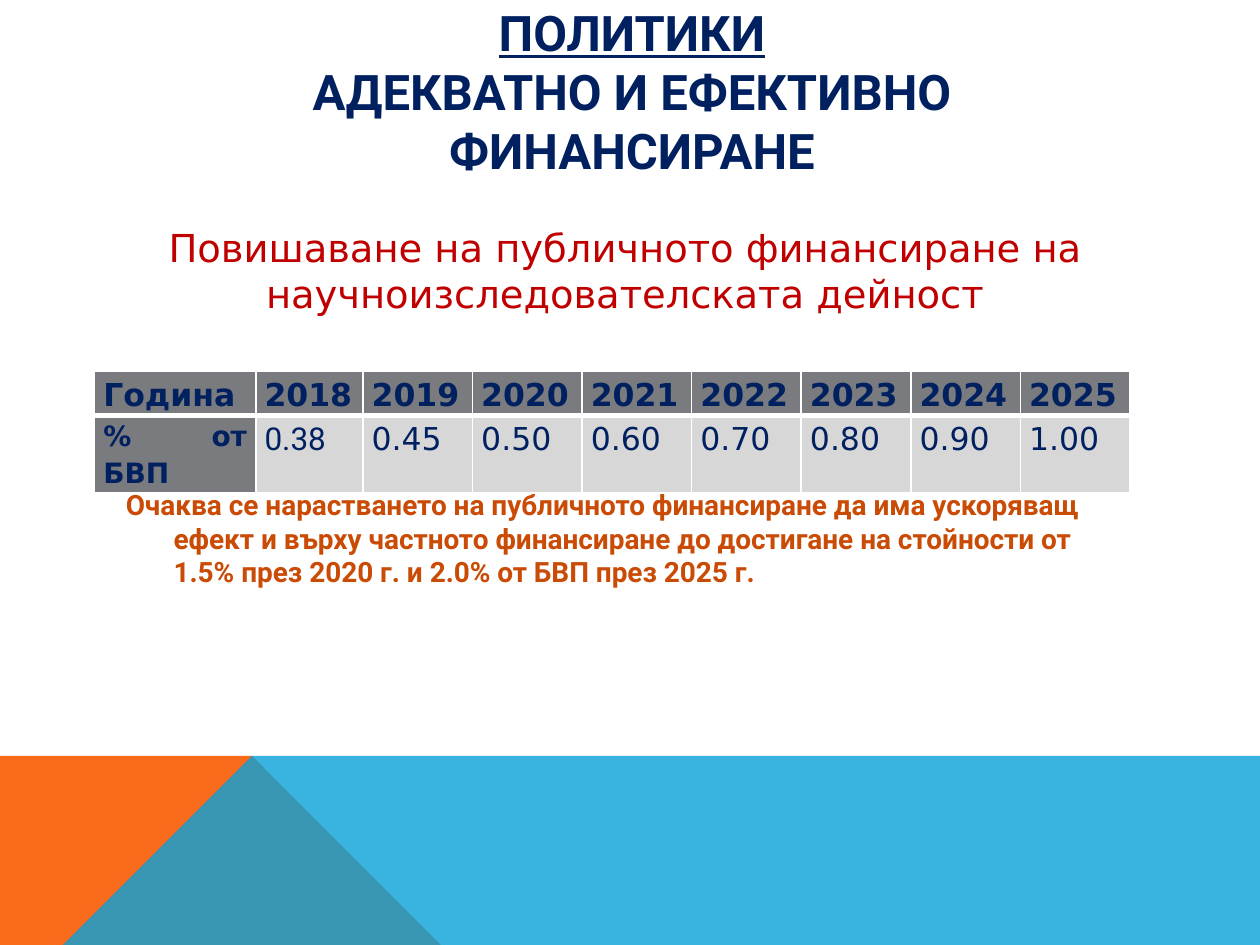
from lxml.etree import SubElement
from pptx import Presentation
from pptx.dml.color import RGBColor
from pptx.enum.text import MSO_ANCHOR, PP_ALIGN
from pptx.oxml.ns import qn
from pptx.util import Inches, Pt

W, H = 10, 7.5
NAVY, RED, RUST, WHITE = "002060", "C00000", "CA4B05", "FFFFFF"
HEAD_FILL, BODY_FILL = "797B7E", "D7D7D8"
SANS, TITLE_FONT = "DejaVu Sans", "Roboto"

TITLE = [("ПОЛИТИКИ", True), ("АДЕКВАТНО И ЕФЕКТИВНО ФИНАНСИРАНЕ", False)]
SUBTITLE = "Повишаване на публичното финансиране на научноизследователската дейност"
NOTE = ("Очаква се нарастването на публичното финансиране да има ускоряващ "
        "ефект и върху частното финансиране до достигане на стойности от "
        "1.5% през 2020 г. и 2.0% от БВП през 2025 г.")
ROWS = [
    ["Година", "2018", "2019", "2020", "2021", "2022", "2023", "2024", "2025"],
    ["% от БВП", "0.38", "0.45", "0.50", "0.60", "0.70", "0.80", "0.90", "1.00"],
]
COLS = [1.28, 0.85] + [0.87] * 7
ROW_H = 0.35

BAND_TOP, PEAK = 5.52, 2.23
BANDS = [
    ([(0, H), (0, BAND_TOP), (PEAK, BAND_TOP), (3.91, H)], "F96A1B", 100),
    ([(0, H), (PEAK, BAND_TOP), (W, BAND_TOP), (W, H)], "08A1D9", 80),
]


def rgb(color):
    return RGBColor.from_string(color)


def add_run(p, text, size, color, font, bold=False, underline=False):
    r = p.add_run()
    r.text = text
    f = r.font
    f.size, f.name, f.bold, f.underline = Pt(size), font, bold, underline
    f.color.rgb = rgb(color)


def add_box(slide, x, y, w, h, anchor=MSO_ANCHOR.TOP):
    tf = slide.shapes.add_textbox(*map(Inches, (x, y, w, h))).text_frame
    tf.word_wrap = True
    tf.vertical_anchor = anchor
    return tf


def add_band(slide, points, color, alpha):
    fb = slide.shapes.build_freeform(*points[0], scale=Inches(1))
    fb.add_line_segments(points[1:], close=True)
    sp = fb.convert_to_shape()
    sp.shadow.inherit = False
    sp.fill.solid()
    sp.fill.fore_color.rgb = rgb(color)
    sp.line.fill.background()
    if alpha < 100:
        clr = sp.fill._xPr.find(".//" + qn("a:srgbClr"))
        SubElement(clr, qn("a:alpha"), val=str(alpha * 1000))


def set_borders(cell, bottom):
    tcPr = cell._tc.get_or_add_tcPr()
    for i, (side, width) in enumerate([("L", 1), ("R", 1), ("T", 1), ("B", bottom)]):
        ln = tcPr.makeelement(qn("a:ln" + side), {"w": str(Pt(width))})
        fill = SubElement(ln, qn("a:solidFill"))
        SubElement(fill, qn("a:srgbClr"), val=WHITE)
        tcPr.insert(i, ln)


def fill_cell(cell, text, row, col):
    head = row == 0 or col == 0
    cell.fill.solid()
    cell.fill.fore_color.rgb = rgb(HEAD_FILL if head else BODY_FILL)
    cell.margin_left = cell.margin_right = Inches(0.07)
    cell.margin_top = cell.margin_bottom = 0
    p = cell.text_frame.paragraphs[0]
    p.alignment, p.line_spacing, p.space_after = PP_ALIGN.JUSTIFY, 1.15, Pt(6)
    size = 16 if (row, col) == (1, 0) else 18
    font = TITLE_FONT if (row, col) == (1, 1) else SANS
    add_run(p, text, size, NAVY, font, bold=head)
    set_borders(cell, 3 if row == 0 else 1)


def add_budget_table(slide, x, y):
    size = sum(COLS), ROW_H * len(ROWS)
    table = slide.shapes.add_table(
        len(ROWS), len(COLS), *map(Inches, (x, y, *size))).table
    for column, width in zip(table.columns, COLS):
        column.width = Inches(width)
    for i, row in enumerate(ROWS):
        table.rows[i].height = Inches(ROW_H)
        for j, text in enumerate(row):
            fill_cell(table.cell(i, j), text, i, j)


def main():
    prs = Presentation()
    prs.slide_width, prs.slide_height = Inches(W), Inches(H)
    slide = prs.slides.add_slide(prs.slide_layouts[6])

    for band in BANDS:
        add_band(slide, *band)

    tf = add_box(slide, 0.9, 0.42, 8.23, 0.6, MSO_ANCHOR.MIDDLE)
    for i, (text, underline) in enumerate(TITLE):
        p = tf.add_paragraph() if i else tf.paragraphs[0]
        p.alignment = PP_ALIGN.CENTER
        add_run(p, text, 28, NAVY, TITLE_FONT, True, underline)

    p = add_box(slide, 0.9, 3.82, 8.23, 1.3).paragraphs[0]
    pPr = p._p.get_or_add_pPr()
    pPr.set("marL", str(Inches(0.38)))
    pPr.set("indent", str(Inches(-0.38)))
    add_run(p, NOTE, 16, RUST, TITLE_FONT, bold=True)

    p = add_box(slide, 0.51, 1.73, 8.9, 0.84).paragraphs[0]
    p.alignment = PP_ALIGN.CENTER
    add_run(p, SUBTITLE, 22, RED, SANS)

    add_budget_table(slide, 0.75, 2.95)
    prs.save("out.pptx")


if __name__ == "__main__":
    main()
